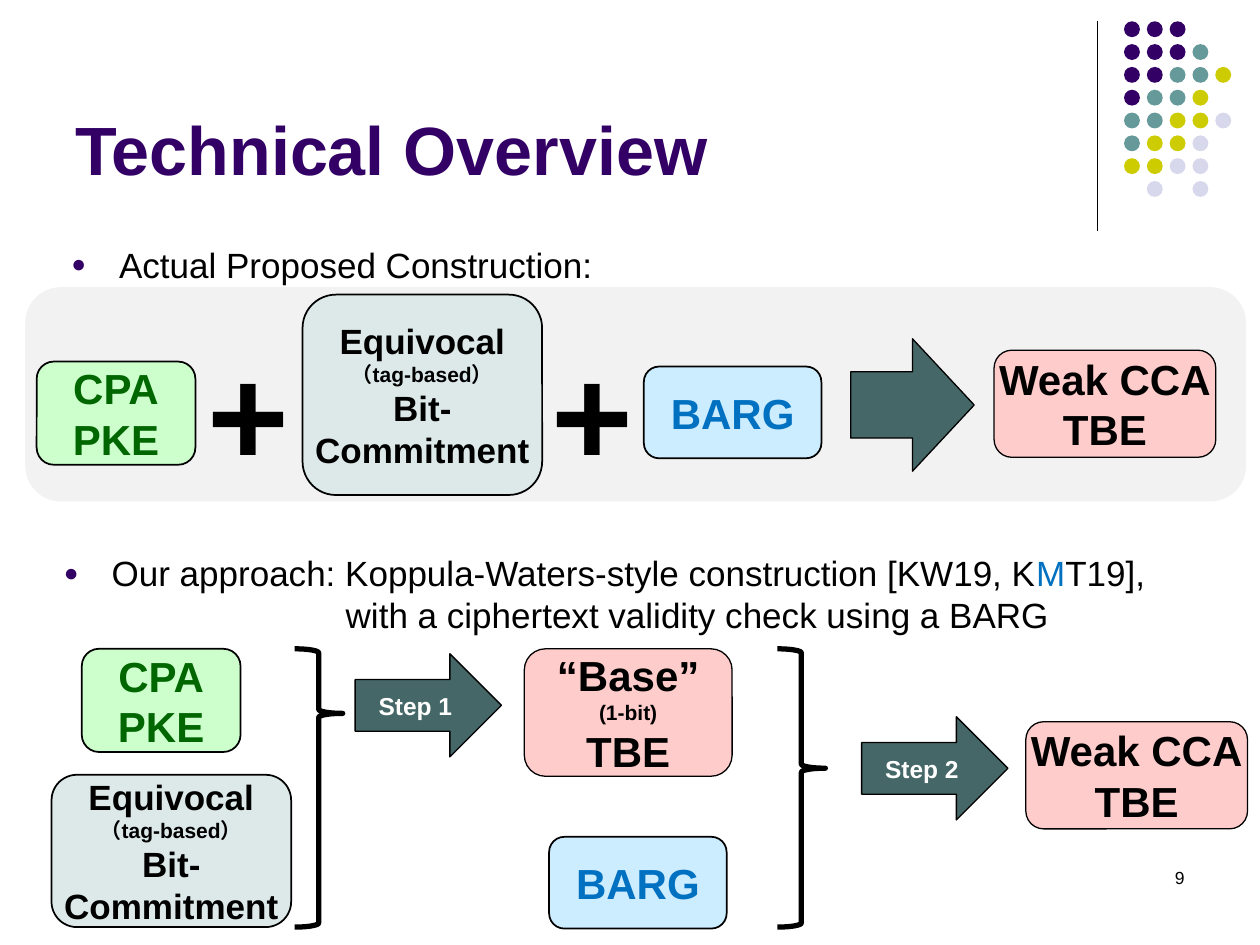
from dataclasses import dataclass

from lxml.etree import SubElement
from pptx import Presentation
from pptx.dml.color import RGBColor
from pptx.enum.shapes import MSO_CONNECTOR, MSO_SHAPE
from pptx.enum.text import MSO_ANCHOR, PP_ALIGN
from pptx.oxml.ns import qn
from pptx.util import Cm, Pt


@dataclass(frozen=True)
class Theme:
    font: str = "Arial"
    ink: str = "000000"
    paper: str = "FFFFFF"
    purple: str = "330066"
    teal: str = "669999"
    lime: str = "CCCC00"
    lavender: str = "D8D8EC"
    panel: str = "F2F2F2"
    arrow: str = "456767"
    mist: str = "DDE9E9"
    pink: str = "FFCCCC"
    mint: str = "CCFFCC"
    sky: str = "CCECFF"
    green: str = "006600"
    blue: str = "0070C0"
    title: int = 39
    plus: int = 80
    block: int = 24
    body: int = 20
    step: int = 14
    note: int = 12
    number: int = 10


class Deck:
    """Hold the theme and current slide and draw each kind of element."""

    def __init__(self, theme):
        self.theme = theme
        self.presentation = Presentation()
        self.presentation.slide_width = Cm(25.4)
        self.presentation.slide_height = Cm(19.05)
        self.slide = self.presentation.slides.add_slide(self.presentation.slide_layouts[6])

    def style(self, run, size, color, bold=False):
        run.font.name = self.theme.font
        run.font.size = Pt(size)
        run.font.bold = bold
        run.font.color.rgb = RGBColor.from_string(color)

    def shape(self, kind, left, top, width, height, fill=None, line=None, adjustments=()):
        drawn = self.slide.shapes.add_shape(kind, Cm(left), Cm(top), Cm(width), Cm(height))
        drawn.shadow.inherit = False
        for index, value in enumerate(adjustments):
            drawn.adjustments[index] = value
        if fill:
            drawn.fill.solid()
            drawn.fill.fore_color.rgb = RGBColor.from_string(fill)
        else:
            drawn.fill.background()
        if line:
            drawn.line.color.rgb = RGBColor.from_string(self.theme.ink)
            drawn.line.width = Pt(line)
        else:
            drawn.line.fill.background()
        return drawn

    def label(self, drawn, text, sizes, color):
        frame = drawn.text_frame
        frame.word_wrap = False
        frame.vertical_anchor = MSO_ANCHOR.MIDDLE
        frame.text = text
        for paragraph, size in zip(frame.paragraphs, sizes):
            paragraph.alignment = PP_ALIGN.CENTER
            self.style(paragraph.runs[0], size, color, bold=True)

    def block(self, left, top, width, height, text, sizes, fill, color, line=1):
        drawn = self.shape(MSO_SHAPE.ROUNDED_RECTANGLE, left, top, width, height, fill, line)
        self.label(drawn, text, sizes, color)

    def arrow(self, left, top, width, height, text=""):
        drawn = self.shape(MSO_SHAPE.RIGHT_ARROW, left, top, width, height, self.theme.arrow, 0.75)
        if text:
            self.label(drawn, text, [self.theme.step], self.theme.paper)

    def brace(self, left, tip):
        self.shape(MSO_SHAPE.RIGHT_BRACE, left, 13.08, 0.97, 5.61, line=3, adjustments=(0.083, tip))

    def text(self, left, top, width, height, text, size, color, bold=False,
             align=PP_ALIGN.LEFT, anchor=MSO_ANCHOR.TOP):
        frame = self.slide.shapes.add_textbox(Cm(left), Cm(top), Cm(width), Cm(height)).text_frame
        frame.word_wrap = True
        frame.vertical_anchor = anchor
        frame.text = text
        for paragraph in frame.paragraphs:
            paragraph.alignment = align
            self.style(paragraph.runs[0], size, color, bold)
        return frame

    def bullet(self, left, top, width, text):
        frame = self.text(left, top, width, 1.52, text, self.theme.body, self.theme.ink)
        paragraph = frame.paragraphs[0]
        paragraph.space_before = Pt(4)
        properties = paragraph._p.get_or_add_pPr()
        properties.set("marL", str(Cm(0.96)))
        properties.set("indent", str(Cm(-0.96)))
        SubElement(SubElement(properties, qn("a:buClr")), qn("a:srgbClr"), val=self.theme.purple)
        SubElement(properties, qn("a:buSzPct"), val="70000")
        SubElement(properties, qn("a:buFont"), typeface=self.theme.font)
        SubElement(properties, qn("a:buChar"), char="●")
        return frame

    def rule(self, x, top, bottom):
        line = self.slide.shapes.add_connector(MSO_CONNECTOR.STRAIGHT, Cm(x), Cm(top), Cm(x), Cm(bottom))
        line.line.color.rgb = RGBColor.from_string(self.theme.ink)
        line.line.width = Pt(0.75)
        SubElement(line._element.spPr, qn("a:effectLst"))

    def dots(self, left, top, rows):
        colors = {"P": self.theme.purple, "T": self.theme.teal,
                  "Y": self.theme.lime, "L": self.theme.lavender}
        pitch, size = 0.46, 0.32
        for row, codes in enumerate(rows):
            for column, code in enumerate(codes):
                if code in colors:
                    self.shape(MSO_SHAPE.OVAL, left + column * pitch, top + row * pitch,
                               size, size, colors[code])


def main():
    theme = Theme()
    deck = Deck(theme)
    deck.rule(22.12, 0.43, 4.65)
    deck.dots(22.66, 0.43, ["PPP", "PPPT", "PPTTY", "PTTY", "TTYYL", "TYYL", "YYLL", ".L.L"])
    deck.shape(MSO_SHAPE.ROUNDED_RECTANGLE, 0.51, 5.79, 24.61, 4.32, theme.panel)
    deck.text(1.27, 0.33, 20.96, 3.61, "Technical Overview", theme.title, theme.purple,
              bold=True, anchor=MSO_ANCHOR.BOTTOM)
    deck.text(18.21, 17.35, 5.92, 1.27, "9", theme.number, theme.ink, align=PP_ALIGN.RIGHT)

    deck.bullet(1.19, 4.78, 22.86, "Actual Proposed Construction:")
    approach = deck.bullet(1.04, 11, 23.27, "Our approach: Koppula-Waters-style construction [KW19, K\n"
                           "with a ciphertext validity check using a BARG")
    citation, continuation = approach.paragraphs
    for text, color in (("M", theme.blue), ("T19],", theme.ink)):
        run = citation.add_run()
        run.text = text
        deck.style(run, theme.body, color)
    continuation._p.get_or_add_pPr().set("marL", str(Cm(5.68)))

    for left, top in ((0.74, 7.29), (1.65, 13.08)):
        deck.block(left, top, 3.2, 2.08, "CPA\nPKE", [theme.block] * 2, theme.mint, theme.green)
    for left, top, height in ((6.1, 5.94, 4.04), (1.04, 15.62, 3.07)):
        deck.block(left, top, 4.83, height, "Equivocal\n（tag-based）\nBit-\nCommitment",
                   [theme.body, theme.note, theme.body, theme.body], theme.mist, theme.ink)
    for left, top in ((12.98, 7.39), (11.07, 16.87)):
        deck.block(left, top, 3.58, 1.85, "BARG", [theme.block], theme.sky, theme.blue)
    for left, top in ((20.04, 7.06), (20.68, 14.55)):
        deck.block(left, top, 4.47, 2.16, "Weak CCA\nTBE", [theme.block] * 2,
                   theme.pink, theme.ink, line=0.75)
    deck.block(10.57, 13.08, 4.19, 2.57, "“Base”\n(1-bit)\nTBE",
               [theme.block, theme.note, theme.block], theme.pink, theme.ink, line=0.75)

    for left in (3.94, 10.87):
        deck.text(left, 6.45, 2.01, 3.68, "+", theme.plus, theme.ink, bold=True)
    deck.arrow(17.15, 6.83, 2.49, 2.67)
    deck.arrow(7.16, 13.18, 2.95, 2.08, "Step 1")
    deck.arrow(17.37, 14.45, 2.95, 2.08, "Step 2")
    deck.brace(5.94, 0.232)
    deck.brace(15.67, 0.429)
    deck.presentation.save("out.pptx")


if __name__ == "__main__":
    main()
